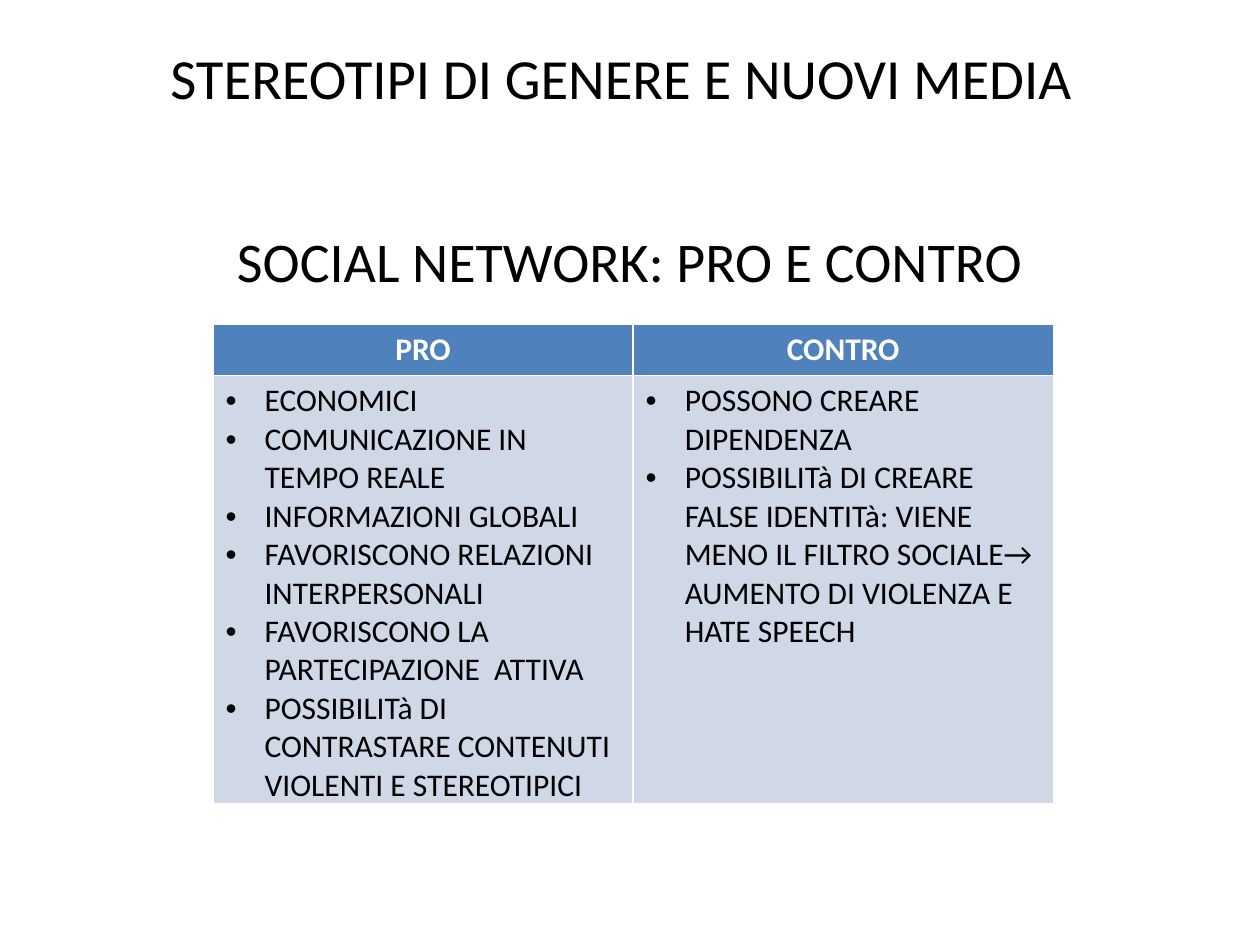
"""Build a slide on the pros and cons of social networks."""
from dataclasses import dataclass

from lxml.etree import SubElement
from pptx import Presentation
from pptx.dml.color import RGBColor
from pptx.enum.text import MSO_ANCHOR, MSO_AUTO_SIZE, PP_ALIGN
from pptx.oxml.ns import qn
from pptx.util import Inches, Pt


@dataclass(frozen=True)
class Theme:
    font: str = "Calibri"
    title_size: float = 32.4
    subtitle_size: float = 32
    table_size: float = 18
    text: RGBColor = RGBColor(0x00, 0x00, 0x00)
    header_text: RGBColor = RGBColor(0xFF, 0xFF, 0xFF)
    header_fill: RGBColor = RGBColor(0x4F, 0x81, 0xBD)
    body_fill: RGBColor = RGBColor(0xD0, 0xD8, 0xE8)


def write(para, text, size, color, align=PP_ALIGN.CENTER, bold=False):
    para.text = text
    para.alignment = align
    para.font.name = theme.font
    para.font.size = Pt(size)
    para.font.color.rgb = color
    para.font.bold = bold


def add_bullet(para):
    properties = para._p.get_or_add_pPr()
    properties.set("marL", str(Inches(0.31)))
    properties.set("indent", str(Inches(-0.31)))
    bullet_font = SubElement(properties, qn("a:buFont"))
    bullet_font.set("typeface", "Arial")
    bullet = SubElement(properties, qn("a:buChar"))
    bullet.set("char", "•")
    properties.append(properties.find(qn("a:defRPr")))


theme = Theme()
columns = {
    "PRO": [
        "ECONOMICI",
        "COMUNICAZIONE IN TEMPO REALE",
        "INFORMAZIONI GLOBALI",
        "FAVORISCONO RELAZIONI INTERPERSONALI",
        "FAVORISCONO LA PARTECIPAZIONE  ATTIVA",
        "POSSIBILITà DI CONTRASTARE CONTENUTI VIOLENTI E STEREOTIPICI",
    ],
    "CONTRO": [
        "POSSONO CREARE DIPENDENZA",
        "POSSIBILITà DI CREARE FALSE IDENTITà: VIENE MENO IL FILTRO SOCIALE→ "
        "AUMENTO DI VIOLENZA E HATE SPEECH",
    ],
}

deck = Presentation()
deck.slide_width, deck.slide_height = Inches(10), Inches(7.5)
page = deck.slides.add_slide(deck.slide_layouts[5])

title = page.shapes.title
title.left, title.top = Inches(0.43), Inches(0.29)
title.width, title.height = Inches(9), Inches(1.25)
title.text_frame.vertical_anchor = MSO_ANCHOR.TOP
title.text_frame.auto_size = MSO_AUTO_SIZE.NONE
write(title.text_frame.paragraphs[0], "STEREOTIPI DI GENERE E NUOVI MEDIA",
      theme.title_size, theme.text)

subtitle = page.shapes.add_textbox(Inches(0.5), Inches(1.75), Inches(9), Inches(4.95))
subtitle.text_frame.word_wrap = True
write(subtitle.text_frame.paragraphs[0], "SOCIAL NETWORK: PRO E CONTRO",
      theme.subtitle_size, theme.text)

table = page.shapes.add_table(2, len(columns), Inches(1.69), Inches(2.57),
                              Inches(6.67), Inches(3.81)).table
table.rows[0].height, table.rows[1].height = Inches(0.41), Inches(3.4)

for index, (heading, points) in enumerate(columns.items()):
    header, body = table.cell(0, index), table.cell(1, index)
    for cell, color in ((header, theme.header_fill), (body, theme.body_fill)):
        cell.fill.solid()
        cell.fill.fore_color.rgb = color
    write(header.text_frame.paragraphs[0], heading, theme.table_size,
          theme.header_text, bold=True)
    for number, point in enumerate(points):
        frame = body.text_frame
        para = frame.add_paragraph() if number else frame.paragraphs[0]
        write(para, point, theme.table_size, theme.text, PP_ALIGN.LEFT)
        add_bullet(para)

deck.save("out.pptx")
